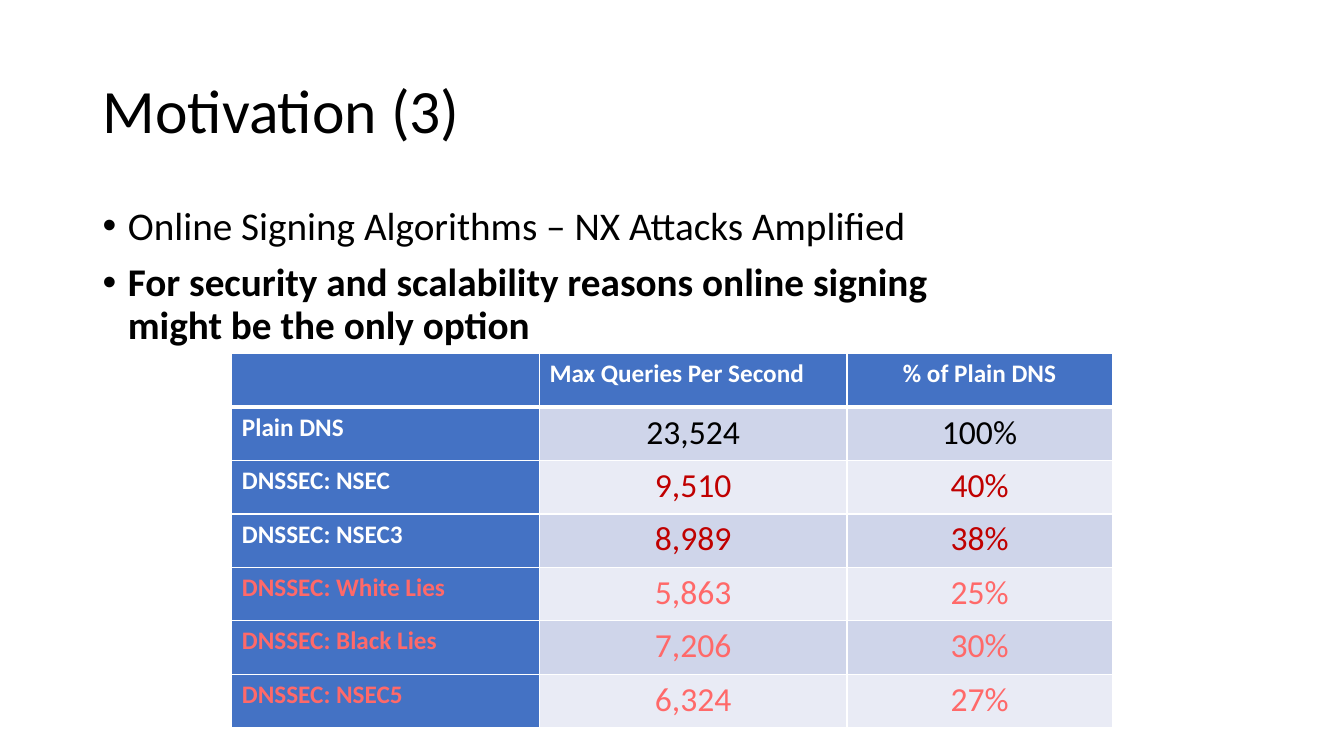
from typing import NamedTuple

from lxml.etree import SubElement
from pptx import Presentation
from pptx.dml.color import RGBColor
from pptx.enum.text import MSO_ANCHOR, PP_ALIGN
from pptx.oxml.ns import qn
from pptx.util import Inches, Pt

BLACK = RGBColor(0x00, 0x00, 0x00)
WHITE = RGBColor(0xFF, 0xFF, 0xFF)
BLUE = RGBColor(0x44, 0x72, 0xC4)
DARK_BAND = RGBColor(0xCF, 0xD5, 0xEA)
LIGHT_BAND = RGBColor(0xE9, 0xEB, 0xF5)
RED = RGBColor(0xC0, 0x00, 0x00)
CORAL = RGBColor(0xFF, 0x69, 0x69)

FONT = "Calibri"
COL_WIDTHS = (3.05, 3.05, 2.63)
ROW_HEIGHT = 0.53


class Result(NamedTuple):
    scheme: str
    queries: str
    share: str
    label_color: RGBColor
    value_color: RGBColor


HEADERS = ("", "Max Queries Per Second", "% of Plain DNS")
RESULTS = (
    Result("Plain DNS", "23,524", "100%", WHITE, BLACK),
    Result("DNSSEC: NSEC", "9,510", "40%", WHITE, RED),
    Result("DNSSEC: NSEC3", "8,989", "38%", WHITE, RED),
    Result("DNSSEC: White Lies", "5,863", "25%", CORAL, CORAL),
    Result("DNSSEC: Black Lies", "7,206", "30%", CORAL, CORAL),
    Result("DNSSEC: NSEC5", "6,324", "27%", CORAL, CORAL),
)


def write(p, text: str, *, size: float, color: RGBColor = BLACK,
          bold: bool = False, align: PP_ALIGN = PP_ALIGN.LEFT) -> None:
    """Fill a paragraph; a newline in the text becomes a line break."""
    p.alignment = align
    for i, line in enumerate(text.split("\n")):
        if i:
            p.add_line_break()
        r = p.add_run()
        r.text = line
        r.font.name = FONT
        r.font.size = Pt(size)
        r.font.bold = bold
        r.font.color.rgb = color


def add_text_frame(s, left: float, top: float, width: float, height: float,
                   anchor: MSO_ANCHOR):
    tf = s.shapes.add_textbox(Inches(left), Inches(top), Inches(width),
                              Inches(height)).text_frame
    tf.word_wrap = True
    tf.vertical_anchor = anchor
    return tf


def add_bullet(p) -> None:
    p.line_spacing = 0.9
    p.space_before = Pt(10)
    pPr = p._p.get_or_add_pPr()
    pPr.set("marL", str(Inches(0.25)))
    pPr.set("indent", str(-Inches(0.25)))
    SubElement(pPr, qn("a:buFont"), typeface="Arial")
    SubElement(pPr, qn("a:buChar"), char="•")


def set_borders(cell, top: float, bottom: float) -> None:
    """Draw white borders; the widths are in points, the sides take 1."""
    tcPr = cell._tc.get_or_add_tcPr()
    for side, width in (("L", 1), ("R", 1), ("T", top), ("B", bottom)):
        ln = SubElement(tcPr, qn(f"a:ln{side}"), w=str(Pt(width)))
        fill = SubElement(ln, qn("a:solidFill"))
        SubElement(fill, qn("a:srgbClr"), val=str(WHITE))


def fill_cell(cell, text: str, fill: RGBColor, *, top: float = 1,
              bottom: float = 1, **text_format) -> None:
    set_borders(cell, top, bottom)
    cell.fill.solid()
    cell.fill.fore_color.rgb = fill
    if text:
        write(cell.text_frame.paragraphs[0], text, **text_format)


def add_results_table(s) -> None:
    table = s.shapes.add_table(
        len(RESULTS) + 1, len(HEADERS), Inches(2.3), Inches(3.51),
        Inches(sum(COL_WIDTHS)), Inches(ROW_HEIGHT * (len(RESULTS) + 1))).table
    for column, width in zip(table.columns, COL_WIDTHS):
        column.width = Inches(width)
    for row in table.rows:
        row.height = Inches(ROW_HEIGHT)

    aligns = (PP_ALIGN.LEFT, PP_ALIGN.LEFT, PP_ALIGN.CENTER)
    for col, (header, align) in enumerate(zip(HEADERS, aligns)):
        fill_cell(table.cell(0, col), header, BLUE, bottom=3, size=18,
                  color=WHITE, bold=True, align=align)
    for row, result in enumerate(RESULTS, start=1):
        top = 3 if row == 1 else 1
        band = DARK_BAND if row % 2 else LIGHT_BAND
        fill_cell(table.cell(row, 0), result.scheme, BLUE, top=top, size=18,
                  color=result.label_color, bold=True)
        for col, value in enumerate((result.queries, result.share), start=1):
            fill_cell(table.cell(row, col), value, band, top=top, size=24,
                      color=result.value_color, align=PP_ALIGN.CENTER)


def main() -> None:
    prs = Presentation()
    prs.slide_width, prs.slide_height = Inches(13.33), Inches(7.5)
    s = prs.slides.add_slide(prs.slide_layouts[6])

    title = add_text_frame(s, 0.92, 0.4, 11.5, 1.45, MSO_ANCHOR.MIDDLE)
    title.paragraphs[0].line_spacing = 0.9
    write(title.paragraphs[0], "Motivation (3)", size=44)

    body = add_text_frame(s, 0.92, 2, 11.5, 4.76, MSO_ANCHOR.TOP)
    signing, reasons = body.paragraphs[0], body.add_paragraph()
    add_bullet(signing)
    write(signing, "Online Signing Algorithms – NX Attacks Amplified", size=28)
    add_bullet(reasons)
    write(reasons, "For security and scalability reasons online signing\n"
          "might be the only option", size=28, bold=True)

    add_results_table(s)
    prs.save("out.pptx")


if __name__ == "__main__":
    main()
